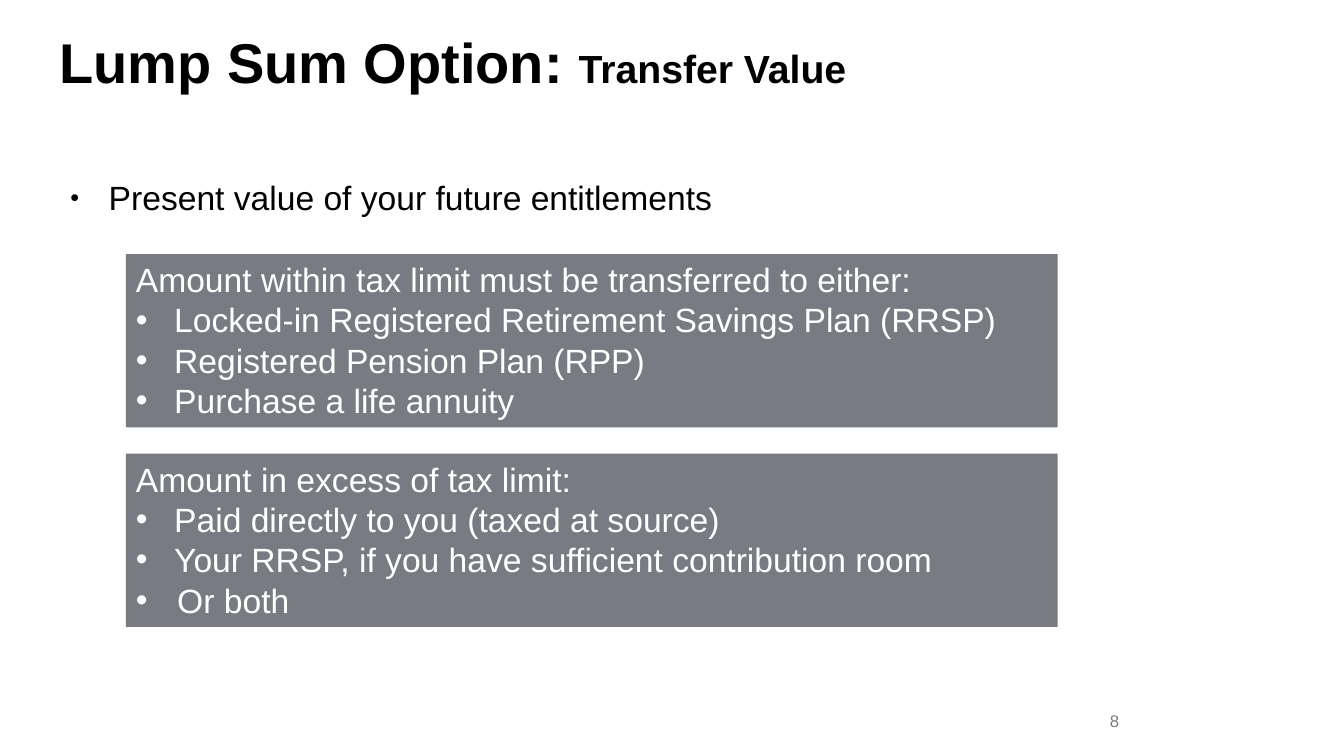
import pptx
import pptx.dml.color
import pptx.enum.shapes
import pptx.enum.text
import pptx.oxml
import pptx.oxml.ns
import pptx.util
from pptx.util import Inches

ANCHOR = pptx.enum.text.MSO_ANCHOR
ALIGN = pptx.enum.text.PP_ALIGN
INDENT = 0.38
BLACK, WHITE, GREY, SLATE = "000000", "FFFFFF", "797B7D", "4B4F59"

TITLE = [("Lump Sum Option: ", 40), ("Transfer Value", 28)]
LEAD = "Present value of your future entitlements"
PAGE_NUMBER = "8"
PANELS = [
    ("Amount within tax limit must be transferred to either:", [
        ("Locked-in Registered Retirement Savings Plan (RRSP)", INDENT),
        ("Registered Pension Plan (RPP)", INDENT),
        ("Purchase a life annuity", INDENT),
    ]),
    ("Amount in excess of tax limit:", [
        ("Paid directly to you (taxed at source)", INDENT),
        ("Your RRSP, if you have sufficient contribution room", INDENT),
        ("Or both", 0.41),
    ]),
]
PANEL_LEFT, PANEL_TOP, PANEL_WIDTH, PANEL_HEIGHT = 1.25, 2.52, 9.24, 1.72
PANEL_STEP = 1.98


def color(value):
    return pptx.dml.color.RGBColor.from_string(value)


def add_xml(parent, tag, **attributes):
    child = pptx.oxml.parse_xml(f"<a:{tag} {pptx.oxml.ns.nsdecls('a')}/>")
    for name, value in attributes.items():
        child.set(name, str(value))
    parent.append(child)


def add_bullet(para, indent, percent=100):
    properties = para._p.get_or_add_pPr()
    properties.set("marL", str(Inches(indent)))
    properties.set("indent", str(-Inches(indent)))
    add_xml(properties, "buSzPct", val=percent * 1000)
    add_xml(properties, "buFont", typeface="Arial")
    add_xml(properties, "buChar", char="•")


def add_span(para, text, size, hue, bold=False):
    span = para.add_run()
    span.text = text
    formats = {"name": "Arial", "size": pptx.util.Pt(size), "bold": bold}
    for name, value in formats.items():
        setattr(span.font, name, value)
    span.font.color.rgb = color(hue)


def add_box(page, left, top, width, height, **frame_formats):
    box = page.shapes.add_textbox(*map(Inches, (left, top, width, height)))
    for name, value in {"word_wrap": True, **frame_formats}.items():
        setattr(box.text_frame, name, value)
    return box.text_frame.paragraphs[0]


def add_panel(page, top, heading, items):
    panel = page.shapes.add_shape(
        pptx.enum.shapes.MSO_SHAPE.RECTANGLE,
        *map(Inches, (PANEL_LEFT, top, PANEL_WIDTH, PANEL_HEIGHT)))
    panel.shadow.inherit = False
    panel.line.fill.background()
    panel.fill.solid()
    panel.fill.fore_color.rgb = color(SLATE)
    fill_color = panel._element.spPr.find(".//" + pptx.oxml.ns.qn("a:srgbClr"))
    add_xml(fill_color, "alpha", val=75000)

    frame = panel.text_frame
    frame.word_wrap = True
    frame.vertical_anchor = ANCHOR.TOP
    para = frame.paragraphs[0]
    para.alignment = ALIGN.LEFT
    add_span(para, heading, 24, WHITE)
    for text, indent in items:
        para = frame.add_paragraph()
        para.alignment = ALIGN.LEFT
        add_bullet(para, indent)
        add_span(para, text, 24, WHITE)


def main():
    deck = pptx.Presentation()
    deck.slide_width, deck.slide_height = Inches(13.33), Inches(7.5)
    page = deck.slides.add_slide(deck.slide_layouts[6])

    para = add_box(page, 0.59, 0.35, 10.5, 1.24, margin_left=0, margin_top=0,
                   margin_right=0, margin_bottom=0)
    para.line_spacing = 0.9
    for text, size in TITLE:
        add_span(para, text, size, BLACK, bold=True)

    para = add_box(page, 0.6, 1.71, 7.22, 0.81)
    add_bullet(para, INDENT, percent=75)
    add_span(para, LEAD, 24, BLACK)

    for index, (heading, items) in enumerate(PANELS):
        add_panel(page, PANEL_TOP + index * PANEL_STEP, heading, items)

    para = add_box(page, 9.63, 6.95, 1.57, 0.4, vertical_anchor=ANCHOR.MIDDLE)
    para.alignment = ALIGN.RIGHT
    add_span(para, PAGE_NUMBER, 12, GREY)

    deck.save("out.pptx")


if __name__ == "__main__":
    main()
